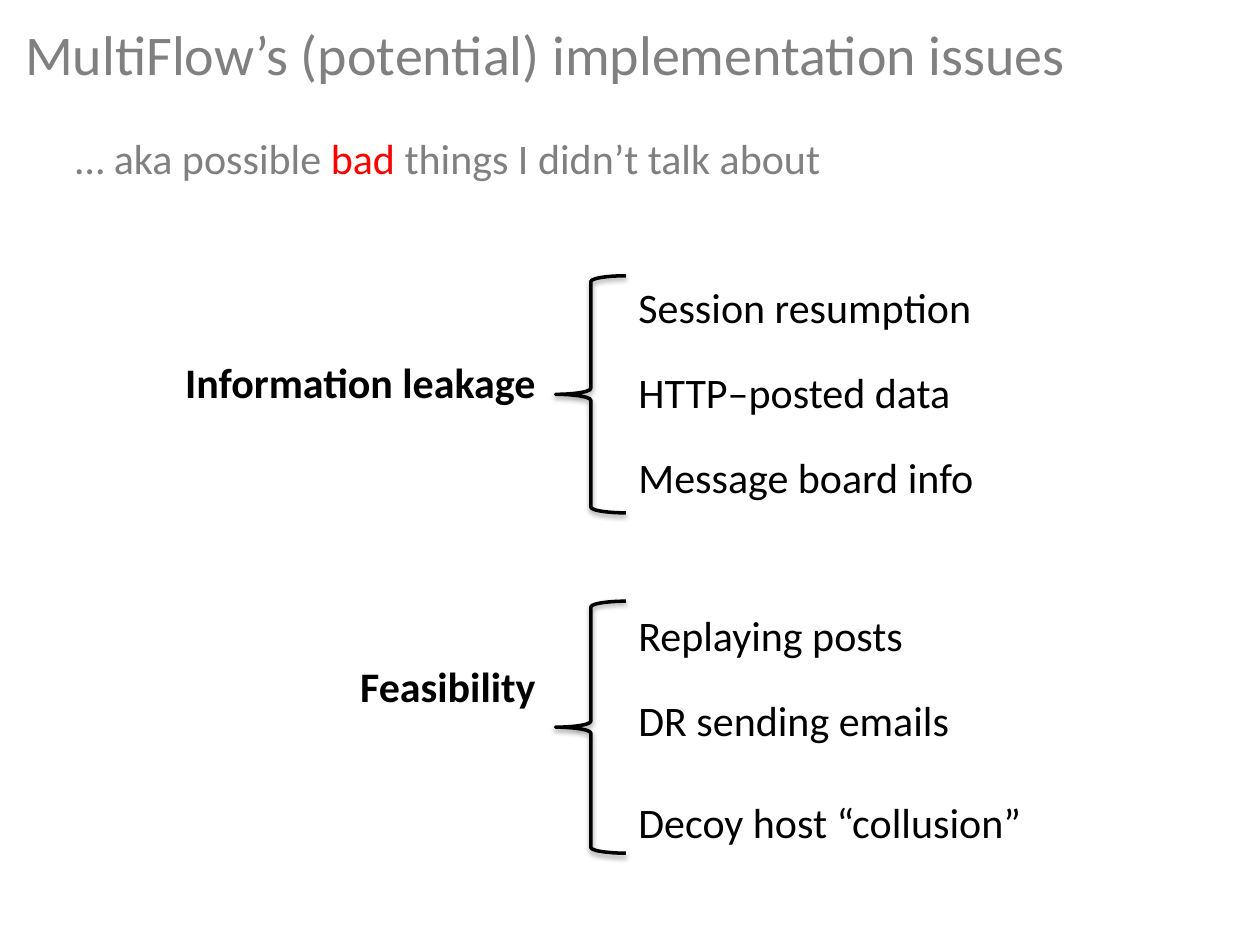
from dataclasses import dataclass

from lxml.etree import SubElement
from pptx import Presentation
from pptx.dml.color import RGBColor
from pptx.enum.shapes import MSO_SHAPE
from pptx.enum.text import MSO_ANCHOR, PP_ALIGN
from pptx.oxml.ns import qn
from pptx.slide import Slide
from pptx.text.text import TextFrame, _Run
from pptx.util import Cm, Pt


@dataclass(frozen=True)
class Theme:
    font: str = "Calibri"
    gray: RGBColor = RGBColor(0x80, 0x80, 0x80)
    red: RGBColor = RGBColor(0xFF, 0, 0)
    black: RGBColor = RGBColor(0, 0, 0)
    title: Pt = Pt(32)
    body: Pt = Pt(24)
    line: Pt = Pt(2)


@dataclass(frozen=True)
class Group:
    label: str
    label_top: float
    brace_top: float
    brace_height: float
    items_top: float
    items: tuple[str, ...]
    gaps: tuple[float, ...]


THEME = Theme()
BRACE_LEFT, BRACE_WIDTH = 11.2, 1.42
ITEMS_LEFT = BRACE_LEFT + BRACE_WIDTH
LABEL_LEFT, LABEL_WIDTH = 2.0, 9.05
GROUPS = (
    Group("Information leakage", 7.06, 5.56, 4.78, 5.56,
          ("Session resumption", "HTTP–posted data", "Message board info"),
          (0, 19.5, 19.5)),
    Group("Feasibility", 13.2, 12.12, 5.08, 12.17,
          ("Replaying posts", "DR sending emails", "Decoy host “collusion”"),
          (0, 19.5, 29.3)),
)


def style(r: _Run, color: RGBColor, size: Pt = THEME.body, bold: bool = False) -> None:
    r.font.name = THEME.font
    r.font.size = size
    r.font.bold = bold
    r.font.color.rgb = color


def add_text(s: Slide, left: float, top: float, width: float, height: float) -> TextFrame:
    tf = s.shapes.add_textbox(Cm(left), Cm(top), Cm(width), Cm(height)).text_frame
    tf.word_wrap = True
    return tf


def add_title(s: Slide, text: str) -> None:
    sp = s.shapes.title
    sp.left, sp.top, sp.width, sp.height = Cm(0.25), Cm(0.13), Cm(25.15), Cm(1.9)
    tf = sp.text_frame
    tf.text = text
    tf.vertical_anchor = MSO_ANCHOR.MIDDLE
    p = tf.paragraphs[0]
    p.alignment = PP_ALIGN.LEFT
    style(p.runs[0], THEME.gray, THEME.title)


def add_subtitle(s: Slide) -> None:
    p = add_text(s, 1.27, 2.54, 22.86, 1.28).paragraphs[0]
    for text, color in (
        ("… aka possible ", THEME.gray),
        ("bad ", THEME.red),
        ("things I didn’t talk about", THEME.gray),
    ):
        r = p.add_run()
        r.text = text
        style(r, color)


def add_brace(s: Slide, top: float, height: float) -> None:
    sp = s.shapes.add_shape(MSO_SHAPE.LEFT_BRACE, Cm(BRACE_LEFT), Cm(top),
                            Cm(BRACE_WIDTH), Cm(height))
    sp.fill.background()
    sp.line.color.rgb = THEME.black
    sp.line.width = THEME.line
    sp.shadow.inherit = False
    effects = sp._element.spPr.find(qn("a:effectLst"))
    shadow = SubElement(effects, qn("a:outerShdw"), blurRad="40000", dist="20000",
                        dir="5400000", rotWithShape="0")
    color = SubElement(shadow, qn("a:srgbClr"), val=str(THEME.black))
    SubElement(color, qn("a:alpha"), val="38000")


def add_group(s: Slide, group: Group) -> None:
    p = add_text(s, LABEL_LEFT, group.label_top, LABEL_WIDTH, 1.28).paragraphs[0]
    p.text = group.label
    p.alignment = PP_ALIGN.RIGHT
    style(p.runs[0], THEME.black, bold=True)
    add_brace(s, group.brace_top, group.brace_height)
    tf = add_text(s, ITEMS_LEFT, group.items_top, 11.86, group.brace_height)
    tf.text = "\n".join(group.items)
    for p, gap in zip(tf.paragraphs, group.gaps):
        p.space_before = Pt(gap)
        style(p.runs[0], THEME.black)


def main() -> None:
    prs = Presentation()
    prs.slide_width, prs.slide_height = Cm(25.4), Cm(19.05)
    s = prs.slides.add_slide(prs.slide_layouts[5])
    add_title(s, "MultiFlow’s (potential) implementation issues")
    add_subtitle(s)
    for group in GROUPS:
        add_group(s, group)
    prs.save("out.pptx")


if __name__ == "__main__":
    main()
